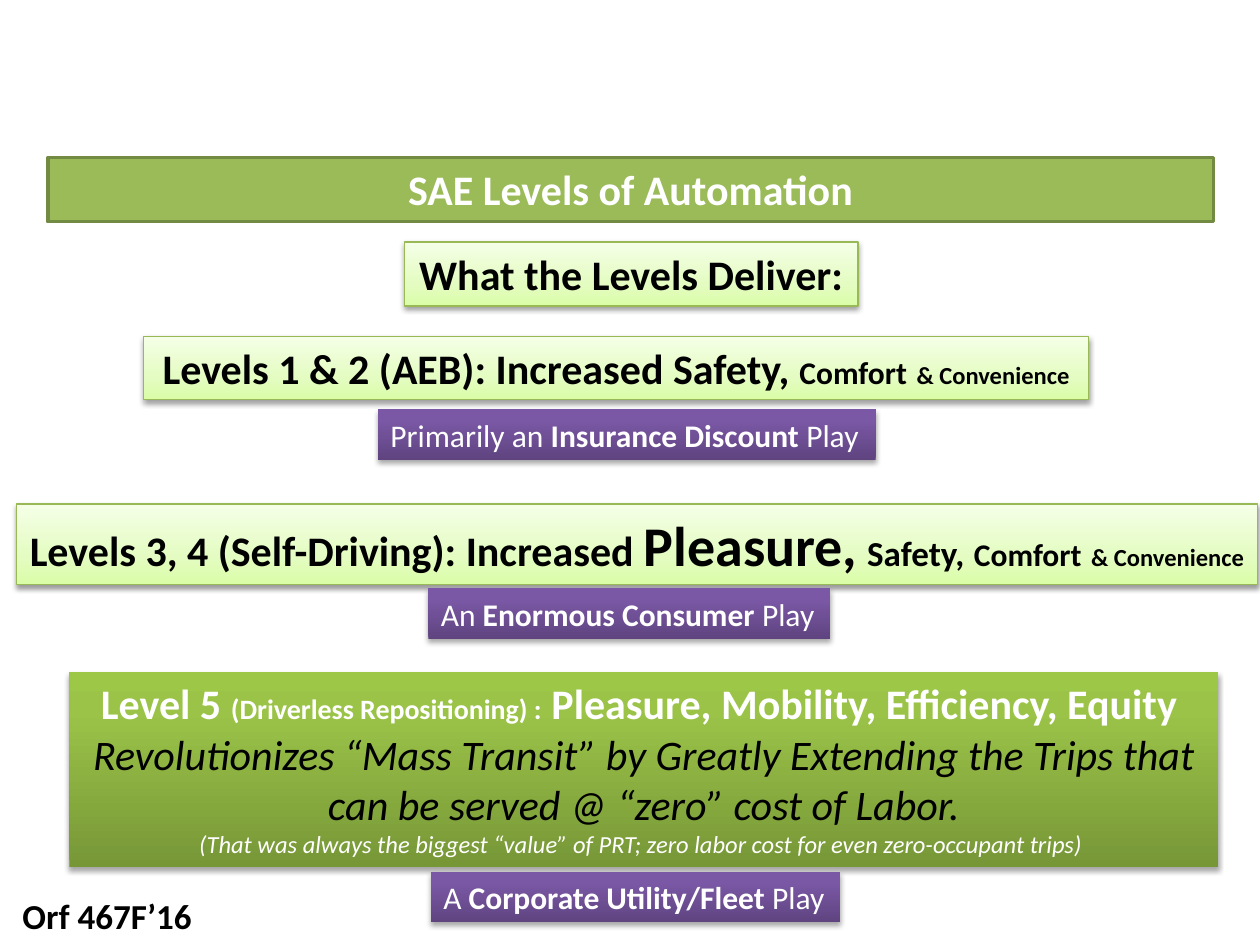
"""Build a slide on what the SAE levels of automation deliver."""
from copy import deepcopy
from lxml.etree import SubElement
from pptx import Presentation
from pptx.dml.color import RGBColor
from pptx.enum.shapes import MSO_SHAPE
from pptx.enum.text import MSO_ANCHOR, MSO_AUTO_SIZE, PP_ALIGN
from pptx.oxml.ns import qn
from pptx.util import Inches, Pt


def tint(code):
    return RGBColor.from_string(code)


def glow(shape, stops, shade, dist):
    fill = shape.fill
    fill.gradient()
    fill.gradient_angle = 90
    first = shape._element.spPr.find(".//" + qn("a:gs"))
    first.addnext(deepcopy(first))
    for stop, (place, code) in zip(fill.gradient_stops, stops):
        stop.position = place
        stop.color.rgb = tint(code)
    effect = shape._element.spPr.find(qn("a:effectLst"))
    outer = SubElement(effect, qn("a:outerShdw"), blurRad=str(Pt(3.1)),
                       dist=str(Pt(dist)), dir="5400000", rotWithShape="0")
    color = SubElement(outer, qn("a:srgbClr"), val="000000")
    SubElement(color, qn("a:alpha"), val=str(shade * 1000))


deck = Presentation()
deck.slide_width, deck.slide_height = Inches(10), Inches(7.5)
slide = deck.slides.add_slide(deck.slide_layouts[6])

LEFT, MID = PP_ALIGN.LEFT, PP_ALIGN.CENTER
looks = {
    "note": {"ink": "000000", "align": LEFT, "wrap": True},
    "bar": {"ink": "FFFFFF", "align": MID, "wrap": True,
            "fill": "9BBB59", "line": ("738A42", 2)},
    "pale": {"ink": "000000", "align": MID, "wrap": False, "line": ("98B955", 0.75),
             "glow": ([(0, "DAFDA7"), (0.35, "E4FCC2"), (1, "F5FFE7")], 38, 1.6)},
    "green": {"ink": "FFFFFF", "align": MID, "wrap": True,
              "glow": ([(0, "779737"), (0.8, "9BC348"), (1, "9DC746")], 35, 1.8)},
    "plum": {"ink": "FFFFFF", "align": LEFT, "wrap": False,
             "glow": ([(0, "5F4480"), (0.8, "7B58A6"), (1, "7C57A8")], 35, 1.8)},
}

bold = {"bold": True}
slant = {"italic": True}
black = {"italic": True, "ink": "000000"}
gap = (" ", 24, bold)
tail = [("Comfort", 18, bold), gap, ("& Convenience", 14, bold)]
boxes = [
    ("note", (0.08, 7.05, 1.58, 0.44), [[("Orf 467F’16", 20, bold)]]),
    ("bar", (0.38, 1.25, 9.25, 0.51), [[("SAE Levels of Automation", 24, bold)]]),
    ("pale", (3.21, 1.92, 3.6, 0.51), [[("What the Levels Deliver:", 24, bold)]]),
    ("pale", (1.14, 2.67, 7.5, 0.5),
     [[("Levels 1 & 2 (AEB): Increased Safety, ", 24, bold), *tail]]),
    ("green", (0.55, 5.33, 9.12, 1.55), [
        [("Level 5 ", 24, bold), ("(Driverless Repositioning) :", 16, bold),
         (" Pleasure, Mobility, Efficiency, Equity ", 24, bold)],
        [("Revolutionizes “Mass Transit” by Greatly Extending the Trips that "
          "can be served @ “zero” cost of Labor.", 24, black)],
        [("(That was always the biggest “value” of PRT; zero labor cost for "
          "even zero-occupant trips) ", 14, slant)]]),
    ("pale", (0.13, 4, 9.85, 0.64),
     [[("Levels 3, 4 (Self-Driving): Increased ", 24, bold),
       ("Pleasure,", 32, bold), gap, ("Safety,", 20, bold), gap, *tail]]),
]
plays = [("Primarily an ", "Insurance Discount ", 3, 3.25, 3.95),
         ("A ", "Corporate Utility/Fleet ", 3.42, 6.92, 3.25),
         ("An ", "Enormous Consumer ", 3.4, 4.67, 3.19)]
for lead, kind, left, top, width in plays:
    boxes.append(("plum", (left, top, width, 0.4),
                  [[(lead, 18, {}), (kind, 18, bold), ("Play", 18, {})]]))

for name, place, lines in boxes:
    look = looks[name]
    spot = [Inches(n) for n in place]
    if name == "note":
        shape = slide.shapes.add_textbox(*spot)
    else:
        shape = slide.shapes.add_shape(MSO_SHAPE.RECTANGLE, *spot)
        shape.shadow.inherit = False
        if "fill" in look:
            shape.fill.solid()
            shape.fill.fore_color.rgb = tint(look["fill"])
        else:
            glow(shape, *look["glow"])
        if "line" in look:
            code, width = look["line"]
            shape.line.color.rgb = tint(code)
            shape.line.width = Pt(width)
        else:
            shape.line.fill.background()
    frame = shape.text_frame
    setup = {"word_wrap": look["wrap"], "vertical_anchor": MSO_ANCHOR.TOP,
             "auto_size": MSO_AUTO_SIZE.SHAPE_TO_FIT_TEXT}
    for key, value in setup.items():
        setattr(frame, key, value)
    for i, line in enumerate(lines):
        para = frame.add_paragraph() if i else frame.paragraphs[0]
        para.alignment = look["align"]
        for text, size, style in line:
            run = para.add_run()
            run.text = text
            form = {"name": "Calibri", "size": Pt(size), "bold": False, **style}
            run.font.color.rgb = tint(form.pop("ink", look["ink"]))
            for key, value in form.items():
                setattr(run.font, key, value)

deck.save("out.pptx")
